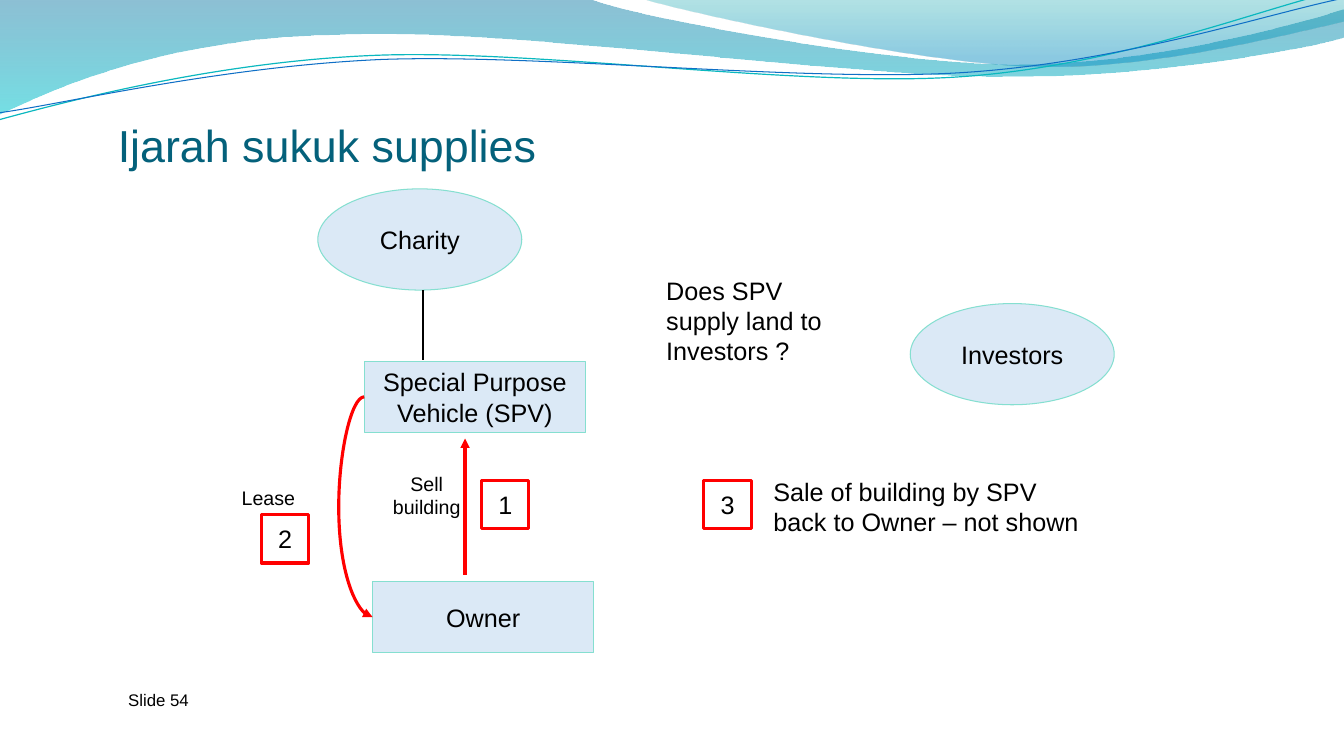
"""Build the Ijarah sukuk supplies slide."""
from dataclasses import dataclass

from lxml.etree import SubElement
from pptx import Presentation
from pptx.dml.color import RGBColor
from pptx.enum.shapes import MSO_CONNECTOR, MSO_SHAPE
from pptx.enum.text import MSO_ANCHOR, PP_ALIGN
from pptx.oxml.ns import qn
from pptx.shapes.autoshape import Shape
from pptx.shapes.connector import Connector
from pptx.slide import Slide
from pptx.text.text import TextFrame
from pptx.util import Cm, Pt

BLACK = RGBColor(0x00, 0x00, 0x00)
RED = RGBColor(0xFF, 0x00, 0x00)
BLUE = RGBColor(0x0F, 0x6F, 0xC6)
MINT = RGBColor(0x85, 0xDF, 0xD0)
TEAL = RGBColor(0x0A, 0xB8, 0xBF)
TITLE = RGBColor(0x04, 0x61, 0x7B)
DEEP_BLUE = RGBColor(0x00, 0x74, 0xA1)
CYAN = RGBColor(0x00, 0xC6, 0xCF)
SEA_GREEN = RGBColor(0x00, 0xA1, 0xA9)
SKY = RGBColor(0x00, 0x8B, 0xBF)
FONT = "Arial"

Point = tuple[float, float]


@dataclass(frozen=True)
class Stop:
    position: float
    color: RGBColor
    opacity: int


@dataclass(frozen=True)
class Wave:
    start: Point
    segments: tuple[tuple[Point, ...], ...]
    stops: tuple[Stop, ...] = ()
    color: RGBColor = BLUE
    width: float = 0.75


@dataclass(frozen=True)
class Node:
    lines: tuple[str, ...]
    left: float
    top: float
    width: float
    height: float
    kind: MSO_SHAPE = MSO_SHAPE.RECTANGLE
    numbered: bool = False


@dataclass(frozen=True)
class Label:
    text: str
    left: float
    top: float
    width: float
    height: float
    size: int = 18
    align: PP_ALIGN = PP_ALIGN.LEFT
    color: RGBColor = BLACK


@dataclass(frozen=True)
class Link:
    start: Point
    end: Point
    kind: MSO_CONNECTOR = MSO_CONNECTOR.STRAIGHT
    color: RGBColor = RED
    width: float = 2.25
    arrow: bool = True
    bend: int | None = None


WAVES = (
    Wave((0, 0), (
        ((14.91, -0.01),),
        ((16.1, 0.45), (22.48, 1.61), (25.68, 1.61)),
        ((28.91, 1.61), (32.46, 0.67), (33.86, 0.24)),
        ((33.91, 0.93),),
        ((33.3, 1.13), (29.46, 1.94), (25.25, 1.92)),
        ((21.06, 1.92), (12.93, 0.72), (8.71, 0.87)),
        ((4.37, 0.92), (1.55, 2.12), (-0.03, 2.88)),
    ), (Stop(0, DEEP_BLUE, 45), Stop(1, CYAN, 55))),
    Wave((16.23, -0.02), (
        ((17.25, 0.29), (23.09, 1.58), (26.04, 1.66)),
        ((28.98, 1.76), (32.56, 0.82), (33.86, 0.54)),
        ((33.86, 0),),
    ), (Stop(0, SEA_GREEN, 30), Stop(0.8, SKY, 45))),
    Wave((-0.03, 3.02), (
        ((1.63, 2.57), (5.36, 1.57), (9.37, 1.4)),
        ((13.39, 1.22), (20.07, 2.21), (24.13, 1.94)),
        ((28.19, 1.68), (31.8, 0.2), (33.81, -0.25)),
    ), color=TEAL, width=0.85),
    Wave((0, 2.84), (
        ((1.6, 2.62), (5.54, 1.68), (9.6, 1.5)),
        ((13.64, 1.35), (20.22, 2.08), (24.26, 1.83)),
        ((28.32, 1.57), (31.88, 0.36), (33.88, -0.05)),
    )),
)
NODES = (
    Node(("Special Purpose", "Vehicle (SPV)"), 9.18, 9.11, 5.58, 1.79),
    Node(("Owner",), 9.39, 14.66, 5.58, 1.79),
    Node(("Investors",), 22.94, 7.65, 5.14, 2.55, MSO_SHAPE.OVAL),
    Node(("Charity",), 8.01, 4.76, 5.14, 2.55, MSO_SHAPE.OVAL),
    Node(("1",), 12.14, 12.11, 1.19, 1.22, numbered=True),
    Node(("2",), 6.59, 12.97, 1.19, 1.22, numbered=True),
    Node(("3",), 17.74, 12.1, 1.19, 1.22, numbered=True),
)
LINKS = (
    Link((11.72, 14.48), (11.72, 11.05)),
    Link((10.66, 7.32), (10.66, 9.07), color=BLACK, width=0.75, arrow=False),
    Link((9.18, 10), (9.39, 15.55), MSO_CONNECTOR.CURVE, bend=-306400),
)
LABELS = (
    Label("Sell building", 9.5, 11.76, 2.51, 1.45, 14, PP_ALIGN.CENTER),
    Label("Lease", 4.63, 12.12, 4.27, 0.84, 14, PP_ALIGN.CENTER),
    Label("Slide 54", 2.98, 17.25, 5.92, 1.02, 12),
    Label("Sale of building by SPV back to Owner – not shown", 19.24, 11.88, 8.31, 1.8),
    Label("Does SPV supply land to Investors ?", 16.54, 6.81, 5, 2.57),
)
HEADING = Label("Ijarah sukuk supplies", 2.97, 2.84, 22.61, 1.47, 32, color=TITLE)


def bend_segments(sp: Shape, wave: Wave) -> None:
    """Turn each group of three vertices into one cubic curve."""
    vertices = iter(list(sp.element.spPr.iter(qn("a:lnTo"))))
    for segment in wave.segments:
        first, *others = [next(vertices) for _ in segment]
        if others:
            first.tag = qn("a:cubicBezTo")
        for vertex in others:
            first.append(vertex[0])
            vertex.getparent().remove(vertex)


def set_opacity(sp: Shape, *percents: int) -> None:
    """Set the opacity of the fill colours in order."""
    for color, percent in zip(sp.element.spPr.iter(qn("a:srgbClr")), percents):
        SubElement(color, qn("a:alpha"), val=str(percent * 1000))


def add_wave(s: Slide, wave: Wave) -> None:
    """Draw a gradient band or a curved line."""
    x, y = wave.start
    builder = s.shapes.build_freeform(Cm(x), Cm(y))
    points = [(Cm(x), Cm(y)) for segment in wave.segments for x, y in segment]
    builder.add_line_segments(points, close=bool(wave.stops))
    sp = builder.convert_to_shape()
    bend_segments(sp, wave)
    sp.shadow.inherit = False
    if wave.stops:
        sp.fill.gradient()
        sp.fill.gradient_angle = 270
        for target, stop in zip(sp.fill.gradient_stops, wave.stops):
            target.position = stop.position
            target.color.rgb = stop.color
        set_opacity(sp, *(stop.opacity for stop in wave.stops))
        sp.line.fill.background()
    else:
        sp.fill.background()
        sp.line.color.rgb = wave.color
        sp.line.width = Pt(wave.width)


def write(tf: TextFrame, lines: tuple[str, ...], size: int, align: PP_ALIGN, color: RGBColor) -> None:
    """Write one paragraph per line."""
    for i, line in enumerate(lines):
        p = tf.add_paragraph() if i else tf.paragraphs[0]
        p.alignment = align
        r = p.add_run()
        r.text = line
        r.font.name, r.font.size = FONT, Pt(size)
        r.font.color.rgb = color


def add_node(s: Slide, node: Node) -> None:
    """Draw a party or a step number."""
    sp = s.shapes.add_shape(node.kind, Cm(node.left), Cm(node.top), Cm(node.width), Cm(node.height))
    sp.shadow.inherit = False
    if node.numbered:
        sp.fill.background()
    else:
        sp.fill.solid()
        sp.fill.fore_color.rgb = BLUE
        set_opacity(sp, 15)
    sp.line.color.rgb = RED if node.numbered else MINT
    sp.line.width = Pt(2.25 if node.numbered else 0.75)
    tf = sp.text_frame
    tf.word_wrap = False
    tf.vertical_anchor = MSO_ANCHOR.MIDDLE
    tf.margin_left = tf.margin_right = Cm(0.18)
    tf.margin_top = tf.margin_bottom = Cm(0)
    write(tf, node.lines, 18, PP_ALIGN.CENTER, BLACK)


def add_link(s: Slide, link: Link) -> Connector:
    """Draw a line or an arrow between two points."""
    ends = (Cm(v) for v in (*link.start, *link.end))
    cxn = s.shapes.add_connector(link.kind, *ends)
    cxn.line.color.rgb = link.color
    cxn.line.width = Pt(link.width)
    spPr = cxn.element.spPr
    if link.arrow:
        SubElement(spPr.find(qn("a:ln")), qn("a:tailEnd"), type="triangle")
    if link.bend is not None:
        guides = spPr.find(qn("a:prstGeom")).find(qn("a:avLst"))
        SubElement(guides, qn("a:gd"), name="adj1", fmla=f"val {link.bend}")
    SubElement(spPr, qn("a:effectLst"))
    return cxn


def add_label(s: Slide, label: Label) -> TextFrame:
    """Place a wrapped text box."""
    sp = s.shapes.add_textbox(Cm(label.left), Cm(label.top), Cm(label.width), Cm(label.height))
    tf = sp.text_frame
    tf.word_wrap = True
    write(tf, (label.text,), label.size, label.align, label.color)
    return tf


def main() -> None:
    """Compose and save the slide."""
    prs = Presentation()
    prs.slide_width, prs.slide_height = Cm(33.87), Cm(19.05)
    s = prs.slides.add_slide(prs.slide_layouts[6])
    for wave in WAVES:
        add_wave(s, wave)
    tf = add_label(s, HEADING)
    tf.vertical_anchor = MSO_ANCHOR.BOTTOM
    tf.margin_left = tf.margin_right = tf.margin_bottom = Cm(0)
    for node in NODES:
        add_node(s, node)
    for link in LINKS:
        add_link(s, link)
    for label in LABELS:
        add_label(s, label)
    prs.save("out.pptx")


if __name__ == "__main__":
    main()
